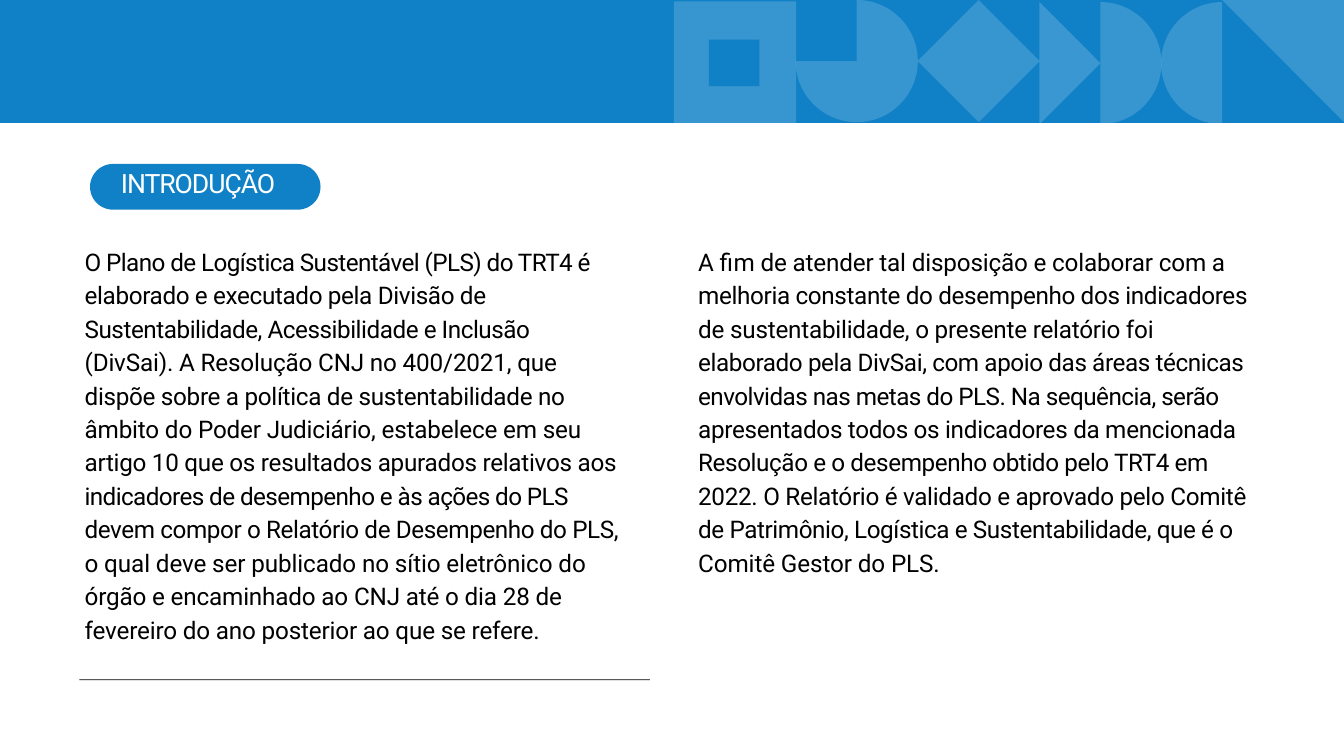
from math import cos, sin, radians
from pptx import Presentation, util as u
from pptx.dml.color import RGBColor
from pptx.enum import shapes, text
from lxml import etree
from pptx.oxml.ns import qn

BLUE = RGBColor(0x11, 0x81, 0xC7)
WHITE = RGBColor(255, 255, 255)
BLACK = RGBColor(0, 0, 0)
FONT = "Roboto"
WIDTH, HEIGHT = 20, 11.25
BANNER = 1.83
TILE = WIDTH / 22
CENTRE = 0.94
UNITS = 1000

TITLE = "INTRODUÇÃO"
COLUMNS = [
    (1.25, 8, 6.03, [
        ("O Plano de Logística Sustentável (PLS) do TRT4 é ", -0.65),
        ("elaborado e executado pela Divisão de ", -0.4),
        ("Sustentabilidade, Acessibilidade e Inclusão ", -0.5),
        ("(DivSai). A Resolução CNJ no 400/2021, que ", -0.2),
        ("dispõe sobre a política de sustentabilidade no ", -0.35),
        ("âmbito do Poder Judiciário, estabelece em seu ", -0.2),
        ("artigo 10 que os resultados apurados relativos aos ", -0.3),
        ("indicadores de desempenho e às ações do PLS ", -0.65),
        ("devem compor o Relatório de Desempenho do PLS, ", -0.45),
        ("o qual deve ser publicado no sítio eletrônico do ", -0.15),
        ("órgão e encaminhado ao CNJ até o dia 28 de ", -0.2),
        ("fevereiro do ano posterior ao que se refere.", -0.2),
    ]),
    (10.38, 8.3, 5.03, [
        ("A fim de atender tal disposição e colaborar com a ", -0.2),
        ("melhoria constante do desempenho dos indicadores ", -0.4),
        ("de sustentabilidade, o presente relatório foi ", -0.25),
        ("elaborado pela DivSai, com apoio das áreas técnicas ", -0.45),
        ("envolvidas nas metas do PLS. Na sequência, serão ", -0.6),
        ("apresentados todos os indicadores da mencionada ", -0.35),
        ("Resolução e o desempenho obtido pelo TRT4 em ", -0.45),
        ("2022. O Relatório é validado e aprovado pelo Comitê ", -0.35),
        ("de Patrimônio, Logística e Sustentabilidade, que é o ", -0.45),
        ("Comitê Gestor do PLS.", -0.15),
    ]),
]


def paint(shape, color, alpha=None):
    shape.shadow.inherit = False
    shape.fill.solid()
    shape.fill.fore_color.rgb = color
    shape.line.fill.background()
    if alpha:
        tint = shape.fill._xPr.find(qn("a:solidFill"))[0]
        etree.SubElement(tint, qn("a:alpha")).set("val", str(alpha * 1000))


def add_block(page, kind, left, top, width, height, color, alpha=None):
    block = page.shapes.add_shape(kind, *map(u.Inches, (left, top, width, height)))
    paint(block, color, alpha)
    return block


def add_polygon(page, points, alpha=16):
    first, *rest = [(x * UNITS, y * UNITS) for x, y in points]
    builder = page.shapes.build_freeform(*first, scale=u.Inches(1) / UNITS)
    builder.add_line_segments(rest, close=True)
    paint(builder.convert_to_shape(), WHITE, alpha)


def arc(x, y, start, end):
    return [(x + TILE * cos(radians(a)), y + TILE * sin(radians(a)))
            for a in range(start, end + 1, 3)]


def add_pattern(page):
    edge = [10.03 + (WIDTH - 10.03) * n / 11 for n in range(12)]
    kinds = shapes.MSO_SHAPE
    add_block(page, kinds.RECTANGLE, edge[0], 0.02, 2 * TILE, 2 * TILE, WHITE, 16)
    add_block(page, kinds.RECTANGLE, 10.55, 0.59, 0.75, 0.69, BLUE)
    add_polygon(page, [(edge[3], TILE)] + arc(edge[3], TILE, -90, 180))
    add_block(page, kinds.DIAMOND, edge[4], 0, 2 * TILE, 2 * TILE, WHITE, 16)
    add_polygon(page, [(edge[6], CENTRE - TILE), (edge[7], CENTRE),
                       (edge[6], CENTRE + TILE)], 18)
    add_polygon(page, arc(edge[7], CENTRE, -90, 90))
    add_polygon(page, arc(edge[9], CENTRE, 90, 270))
    add_polygon(page, [(edge[9], 0), (WIDTH, 0), (WIDTH, 2 * TILE)])


def add_text(page, left, top, width, height, spans, size, color, spacing=None):
    box = page.shapes.add_textbox(*map(u.Inches, (left, top, width, height)))
    frame = box.text_frame
    frame.word_wrap = True
    frame.auto_size = text.MSO_AUTO_SIZE.NONE
    frame.margin_right = frame.margin_bottom = 0
    frame.margin_left = frame.margin_top = u.Inches(0.01)
    para = frame.paragraphs[0]
    para.line_spacing = spacing
    para.font.name = FONT
    para.font.size = u.Pt(size)
    para.font.color.rgb = color
    for words, tracking in spans:
        span = para.add_run()
        span.text = words
        span._r.get_or_add_rPr().set("spc", str(round(tracking * 100)))


def main():
    deck = Presentation()
    deck.slide_width, deck.slide_height = u.Inches(WIDTH), u.Inches(HEIGHT)
    page = deck.slides.add_slide(deck.slide_layouts[6])

    add_block(page, shapes.MSO_SHAPE.RECTANGLE, 0, 0, WIDTH, BANNER, BLUE)
    add_pattern(page)
    pill = add_block(page, shapes.MSO_SHAPE.ROUNDED_RECTANGLE,
                     1.34, 2.44, 3.43, 0.68, BLUE)
    pill.adjustments[0] = 0.5
    add_text(page, 1.79, 2.48, 2.53, 0.5, [(TITLE, -1.1)], 28.5, WHITE)
    for left, width, height, spans in COLUMNS:
        add_text(page, left, 3.6, width, height, spans, 26, BLACK, 1.15)
    add_block(page, shapes.MSO_SHAPE.RECTANGLE, 1.18, 10.11, 8.49, 0.01, BLACK)
    deck.save("out.pptx")


if __name__ == "__main__":
    main()
